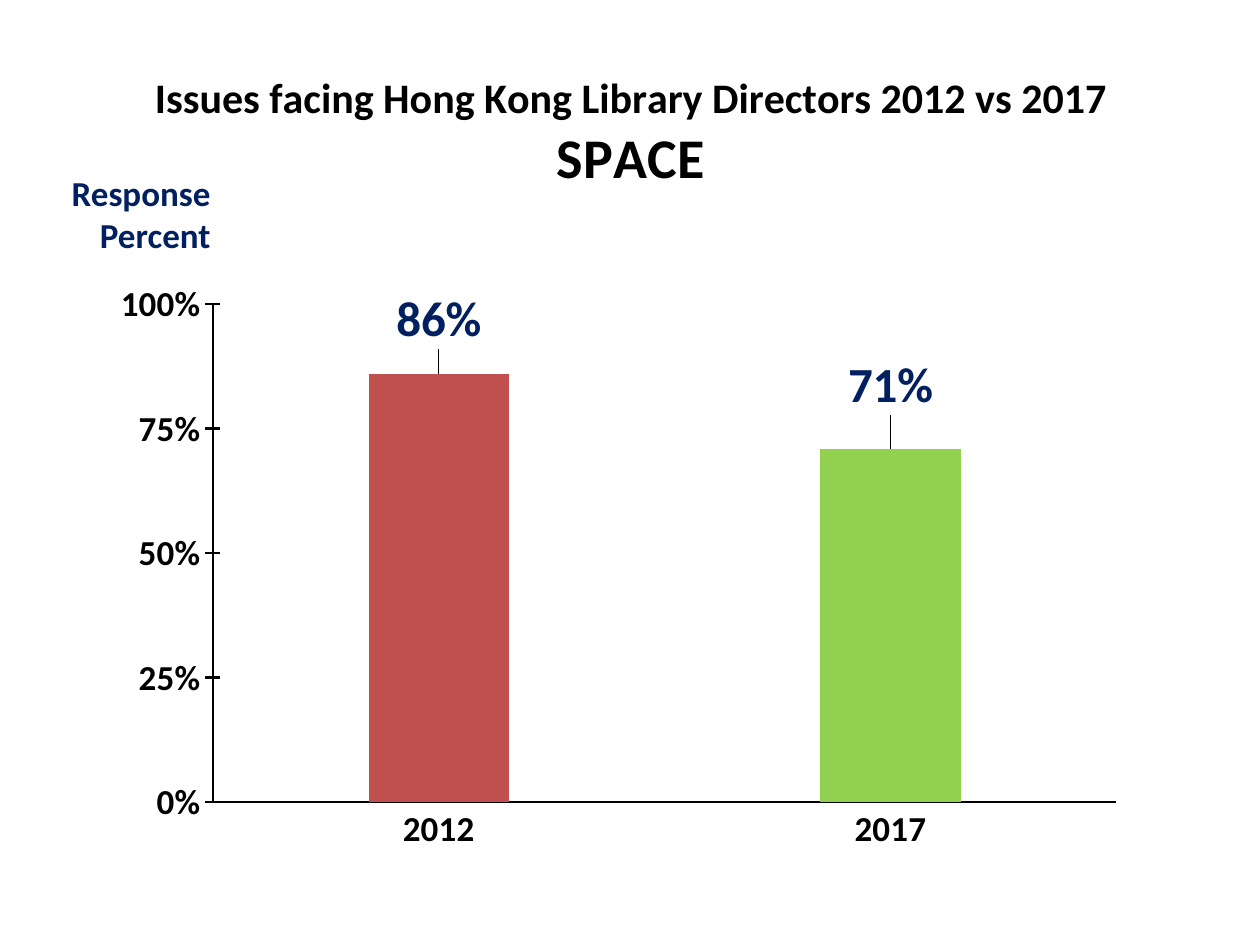
"""Build a slide comparing how many library directors named space as an issue in 2012 and 2017."""
import dataclasses

import pptx
import pptx.chart.data
import pptx.dml.color
import pptx.enum.chart
import pptx.enum.text
import pptx.oxml
import pptx.oxml.ns
import pptx.util

Inches = pptx.util.Inches
Pt = pptx.util.Pt
BLACK = "000000"
NAVY = "002060"


@dataclasses.dataclass(frozen=True)
class YearResult:
    year: str
    share: float
    color: str
    label_shift: float


@dataclasses.dataclass(frozen=True)
class TitleLine:
    text: str
    size: int


RESULTS = [
    YearResult("2012", 0.86, "C0504D", -0.1),
    YearResult("2017", 0.71, "92D050", -0.11),
]
TITLE_LINES = [
    TitleLine("Issues facing Hong Kong Library Directors 2012 vs 2017", 24),
    TitleLine("SPACE", 32),
]


def rgb(color: str) -> pptx.dml.color.RGBColor:
    return pptx.dml.color.RGBColor.from_string(color)


def style_font(font, size: int, color: str) -> None:
    font.name = "Calibri"
    font.size = Pt(size)
    font.bold = True
    font.color.rgb = rgb(color)


def set_layout(parent, index: int, **settings) -> None:
    for old_layout in parent.findall(pptx.oxml.ns.qn("c:layout")):
        parent.remove(old_layout)
    entries = "".join(f'<c:{key} val="{value}"/>' for key, value in settings.items())
    namespace = pptx.oxml.ns.nsdecls("c")
    layout = f"<c:layout {namespace}><c:manualLayout>{entries}</c:manualLayout></c:layout>"
    parent.insert(index, pptx.oxml.parse_xml(layout))


def style_axis(axis, tick_mark, line_width: float) -> None:
    axis.has_major_gridlines = False
    axis.major_tick_mark = tick_mark
    axis.minor_tick_mark = pptx.enum.chart.XL_TICK_MARK.NONE
    axis.format.line.color.rgb = rgb(BLACK)
    axis.format.line.width = Pt(line_width)
    style_font(axis.tick_labels.font, 20, BLACK)


def add_title(chart) -> None:
    chart.has_title = True
    frame = chart.chart_title.text_frame
    frame.text = "\n".join(line.text for line in TITLE_LINES)
    for paragraph, line in zip(frame.paragraphs, TITLE_LINES):
        style_font(paragraph.runs[0].font, line.size, BLACK)
    set_layout(chart.chart_title._element, 1, xMode="edge", yMode="edge", x=0.12, y=0.035)


def style_bar(series, index: int, result: YearResult) -> None:
    point = series.points[index]
    point.format.fill.solid()
    point.format.fill.fore_color.rgb = rgb(result.color)
    label = point.data_label
    style_font(label.font, 28, NAVY)
    label.position = pptx.enum.chart.XL_LABEL_POSITION.INSIDE_END
    label_element = series._element.find(
        f"{pptx.oxml.ns.qn('c:dLbls')}/{pptx.oxml.ns.qn('c:dLbl')}[{index + 1}]"
    )
    set_layout(label_element, 1, x=0, y=result.label_shift)


def add_response_chart(slide) -> None:
    data = pptx.chart.data.CategoryChartData(number_format="0%")
    data.categories = [result.year for result in RESULTS]
    data.add_series("Series 1", [result.share for result in RESULTS])
    chart = slide.shapes.add_chart(
        pptx.enum.chart.XL_CHART_TYPE.COLUMN_STACKED,
        Inches(0), Inches(0.29), Inches(10), Inches(7.01), data,
    ).chart
    chart.has_legend = False
    chart.font.name = "Calibri"
    chart.font.size = Pt(10)
    add_title(chart)

    tick_marks = pptx.enum.chart.XL_TICK_MARK
    style_axis(chart.category_axis, tick_marks.NONE, 1.25)
    percent_axis = chart.value_axis
    style_axis(percent_axis, tick_marks.CROSS, 1.5)
    percent_axis.minimum_scale = 0
    percent_axis.maximum_scale = 1
    percent_axis.major_unit = 0.25
    percent_axis.tick_labels.number_format = "0%"
    percent_axis.tick_labels.number_format_is_linked = False

    plot = chart.plots[0]
    plot.gap_width = 222
    plot.overlap = 100
    plot.vary_by_categories = False
    responses = plot.series[0]
    for index, result in enumerate(RESULTS):
        style_bar(responses, index, result)
    set_layout(
        chart._chartSpace.chart.plotArea, 0, layoutTarget="inner",
        xMode="edge", yMode="edge", x=0.169, y=0.303, w=0.717, h=0.564,
    )


def add_axis_caption(slide) -> None:
    caption = slide.shapes.add_textbox(Inches(0.2), Inches(1.31), Inches(1.57), Inches(0.75))
    caption.text_frame.word_wrap = True
    caption.text_frame.text = "Response Percent"
    paragraph = caption.text_frame.paragraphs[0]
    paragraph.alignment = pptx.enum.text.PP_ALIGN.RIGHT
    style_font(paragraph.runs[0].font, 20, NAVY)


def main() -> None:
    presentation = pptx.Presentation()
    presentation.slide_width = Inches(10)
    presentation.slide_height = Inches(7.5)
    slide = presentation.slides.add_slide(presentation.slide_layouts[6])
    add_response_chart(slide)
    add_axis_caption(slide)
    presentation.save("out.pptx")


if __name__ == "__main__":
    main()
